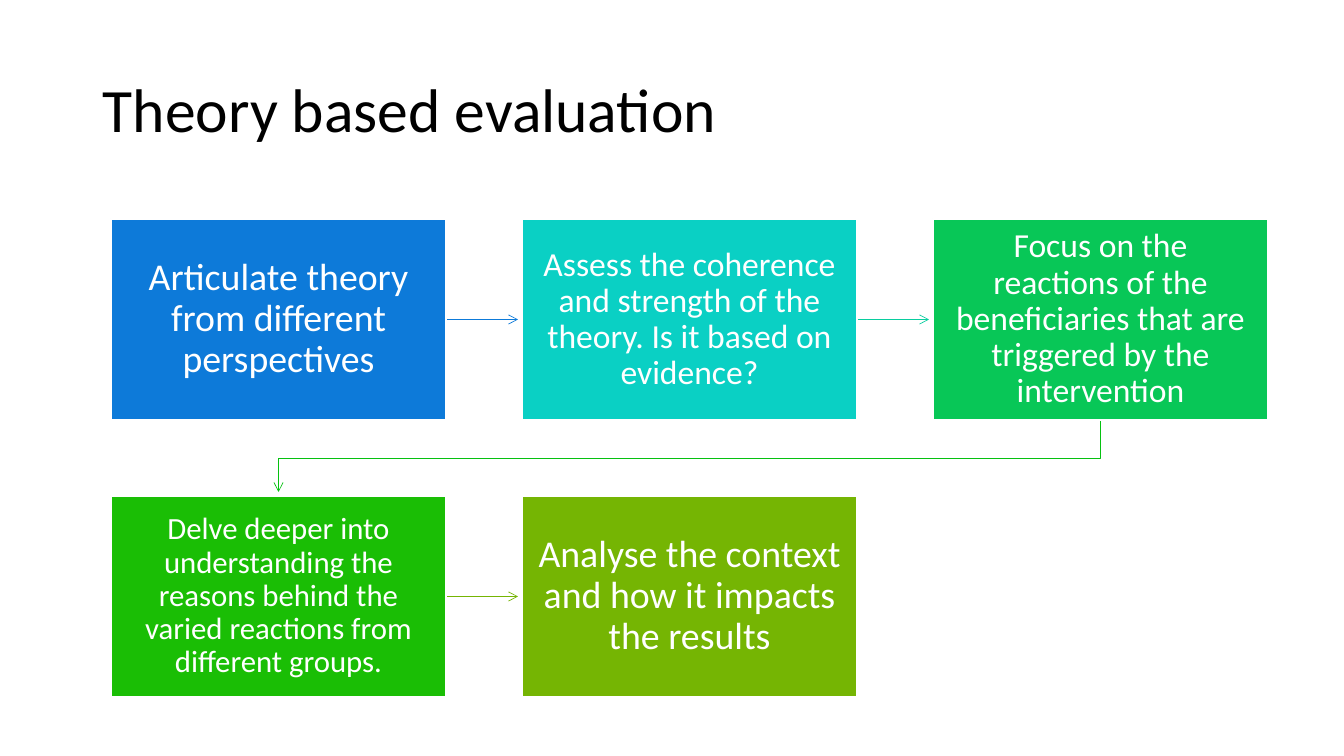
"""Builds a slide showing the five steps of theory based evaluation."""
from lxml import etree
from pptx import Presentation
from pptx.dml.color import RGBColor
from pptx.enum.shapes import MSO_CONNECTOR, MSO_SHAPE
from pptx.enum.text import MSO_ANCHOR, PP_ALIGN
from pptx.oxml.ns import qn
from pptx.util import Pt

RECTANGLE, STRAIGHT = MSO_SHAPE.RECTANGLE, MSO_CONNECTOR.STRAIGHT
MIDDLE, LEFT, CENTER = MSO_ANCHOR.MIDDLE, PP_ALIGN.LEFT, PP_ALIGN.CENTER
RIGHT_SIDE = 3

BLACK = RGBColor(0x00, 0x00, 0x00)
WHITE = RGBColor(0xFF, 0xFF, 0xFF)
BLUE = RGBColor(0x0D, 0x7A, 0xD9)
TURQUOISE = RGBColor(0x0A, 0xD0, 0xC4)
TEAL = RGBColor(0x09, 0xCD, 0x9F)
EMERALD = RGBColor(0x08, 0xC7, 0x57)
GREEN = RGBColor(0x06, 0xC1, 0x11)
LEAF = RGBColor(0x1A, 0xBE, 0x05)
OLIVE = RGBColor(0x75, 0xB5, 0x03)

TITLE = "Theory based evaluation"
STEPS = [
    ("Articulate theory from different perspectives", 27, BLUE),
    ("Assess the coherence and strength of the theory. Is it based on evidence?", 24, TURQUOISE),
    ("Focus on the reactions of the beneficiaries that are triggered by the intervention", 24, EMERALD),
    ("Delve deeper into understanding the reasons behind the varied reactions from different groups.", 22, LEAF),
    ("Analyse the context and how it impacts the results", 27, OLIVE),
]
ARROW_COLORS = [BLUE, TEAL, GREEN, OLIVE]

PAGE_WIDTH, PAGE_HEIGHT = 1344, 756
COLUMNS = 3
GRID_LEFT, GRID_TOP = 111, 219
STEP_WIDTH, STEP_HEIGHT = 335, 201
COLUMN_PITCH, ROW_PITCH = 411, 277
ARROW_GAP = 4


def px(length):
    return round(length * 12192000 / PAGE_WIDTH)


def write(shape, text, size, color, align=CENTER, inset=(16, 17)):
    frame = shape.text_frame
    frame.word_wrap = True
    frame.vertical_anchor = MIDDLE
    frame.margin_left = frame.margin_right = px(inset[0])
    frame.margin_top = frame.margin_bottom = px(inset[1])
    para = frame.paragraphs[0]
    para.alignment = align
    para.line_spacing = 0.9
    span = para.add_run()
    span.text = text
    span.font.name = "Calibri"
    span.font.size = Pt(size)
    span.font.color.rgb = color


def add_step(page, index, text, size, color):
    row, column = divmod(index, COLUMNS)
    box = page.shapes.add_shape(
        RECTANGLE,
        px(GRID_LEFT + column * COLUMN_PITCH), px(GRID_TOP + row * ROW_PITCH),
        px(STEP_WIDTH), px(STEP_HEIGHT))
    box.shadow.inherit = False
    box.fill.solid()
    box.fill.fore_color.rgb = color
    box.line.color.rgb = WHITE
    box.line.width = Pt(1.5)
    write(box, text, size, WHITE)
    return box


def add_straight(page, start, end):
    middle = start.top + start.height // 2
    arrow = page.shapes.add_connector(
        STRAIGHT, start.left + start.width, middle, end.left - px(ARROW_GAP), middle)
    arrow.begin_connect(start, RIGHT_SIDE)
    return arrow


def add_elbow(page, start, end):
    start_x = start.left + start.width // 2
    end_x = end.left + end.width // 2
    bottom = start.top + start.height
    turn = (bottom + end.top) // 2
    builder = page.shapes.build_freeform(start_x, bottom)
    builder.add_line_segments(
        [(start_x, turn), (end_x, turn), (end_x, end.top - px(ARROW_GAP))], close=False)
    arrow = builder.convert_to_shape()
    arrow.fill.background()
    return arrow


def style_arrow(arrow, color):
    arrow.line.color.rgb = color
    arrow.line.width = Pt(0.5)
    properties = arrow.element.spPr
    etree.SubElement(properties.find(qn("a:ln")), qn("a:tailEnd"), type="arrow")
    etree.SubElement(properties, qn("a:effectLst"))
    arrow.element.getparent().insert(2, arrow.element)


def main():
    deck = Presentation()
    deck.slide_width, deck.slide_height = px(PAGE_WIDTH), px(PAGE_HEIGHT)
    page = deck.slides.add_slide(deck.slide_layouts[6])
    title = page.shapes.add_textbox(px(93), px(40), px(1159), px(146))
    write(title, TITLE, 44, BLACK, align=LEFT, inset=(10, 5))
    boxes = [add_step(page, index, *step) for index, step in enumerate(STEPS)]
    for start, end, color in zip(boxes, boxes[1:], ARROW_COLORS):
        add_arrow = add_straight if start.top == end.top else add_elbow
        style_arrow(add_arrow(page, start, end), color)
    deck.save("out.pptx")


if __name__ == "__main__":
    main()
